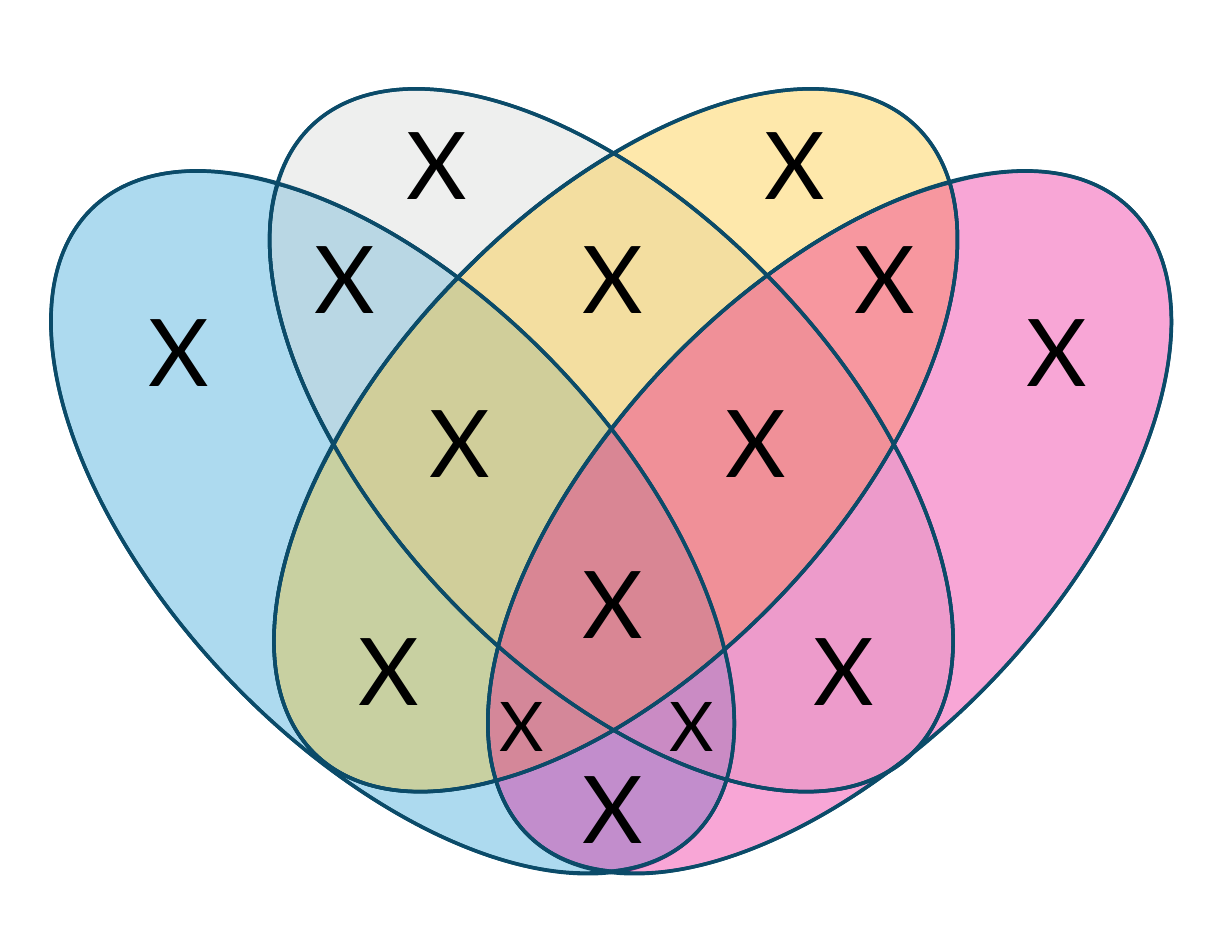
import math

import pptx
import pptx.dml.color
import pptx.enum.shapes
import pptx.enum.text
import pptx.oxml.ns
import pptx.util
from lxml import etree

Cm = pptx.util.Cm
qn = pptx.oxml.ns.qn

COLORS = {
    "blue": "1596D2",
    "grey": "D1D2D1",
    "yellow": "FDBF11",
    "pink": "EC008B",
    "outline": "0B4B69",
    "text": "000000",
}
TILT = 43.6
OVAL_WIDTH, OVAL_HEIGHT = 10.29, 19.71

# Oval: left, top, rotation, colour (lengths in cm)
OVALS = {
    "A": (3.76, 1.99, -TILT, "blue"),
    "B": (8.72, 0.13, -TILT, "grey"),
    "C": (8.82, 0.13, TILT, "yellow"),
    "D": (13.67, 1.99, TILT, "pink"),
}
# Crossings of the ovals, plus the outermost points w (left) and y (right)
POINTS = {
    "a": (13.92, 3.48), "b": (17.40, 6.25), "c": (13.87, 9.73),
    "d": (10.39, 6.30), "e": (21.54, 4.14), "f": (20.27, 10.08),
    "g": (6.30, 4.17), "h": (7.57, 10.08), "i": (16.43, 14.73),
    "j": (13.92, 16.56), "k": (11.30, 14.66), "l": (11.25, 17.70),
    "m": (20.70, 17.07), "n": (20.17, 17.48), "o": (16.48, 17.68),
    "p": (13.87, 19.76), "w": (1.16, 7.30), "y": (26.57, 7.30),
}
# Each region alternates a point with the oval followed to the next point
REGIONS = [
    "aBbDcAdC", "eCfBbD", "gAdChB", "cAiCjBkD", "hBkDlC", "fBmDnBoAiC",
    "jBoApDlC", "gBaCdA", "aCeDbB", "eDyDmBfC", "gBhClDpAwA", "bBfCiAcD",
    "dAcDkBhC", "kBjClD", "iAoBjC", "mBnD", "nDpAoB",
]
LARGE_LABELS = [
    (2.77, 6.53), (7.54, 13.77), (12.62, 16.89), (17.86, 13.77),
    (22.68, 6.53), (16.74, 2.29), (8.62, 2.29), (6.53, 4.86),
    (12.62, 4.86), (18.79, 4.86), (15.85, 8.59), (9.14, 8.59),
    (12.62, 12.24),
]
SMALL_LABELS = [(10.54, 15.37), (14.40, 15.37)]


def turn(x, y, degrees):
    angle = math.radians(degrees)
    return (x * math.cos(angle) - y * math.sin(angle),
            x * math.sin(angle) + y * math.cos(angle))


def arc(oval, start, end):
    """Cubic curves on the shorter arc: two controls and an end for each."""
    left, top, rotation, _ = OVALS[oval]
    center_x, center_y = left + OVAL_WIDTH / 2, top + OVAL_HEIGHT / 2

    def angle_of(point):
        x, y = turn(point[0] - center_x, point[1] - center_y, -rotation)
        return math.atan2(y / OVAL_HEIGHT, x / OVAL_WIDTH)

    def place(angle, pull):
        """Point at an angle, moved along its tangent by pull."""
        x, y = turn(
            OVAL_WIDTH / 2 * (math.cos(angle) - pull * math.sin(angle)),
            OVAL_HEIGHT / 2 * (math.sin(angle) + pull * math.cos(angle)),
            rotation)
        return center_x + x, center_y + y

    first = angle_of(start)
    sweep = (angle_of(end) - first + math.pi) % math.tau - math.pi
    count = math.ceil(abs(sweep) / math.radians(45))
    step = sweep / count
    pull = 4 / 3 * math.tan(step / 4)
    points = []
    for index in range(count):
        angle = first + index * step
        points += [place(angle, pull), place(angle + step, -pull),
                   place(angle + step, 0)]
    return points[:-1] + [end]


class VennSlide:
    font = "Lato"
    line_width = 2.25

    def __init__(self, deck):
        self.shapes = deck.slides.add_slide(deck.slide_layouts[6]).shapes

    def color(self, name):
        return pptx.dml.color.RGBColor.from_string(COLORS[name])

    def outline(self, shape):
        shape.shadow.inherit = False
        shape.line.color.rgb = self.color("outline")
        shape.line.width = pptx.util.Pt(self.line_width)

    def oval(self, left, top, rotation, color, opacity=35):
        shape = self.shapes.add_shape(
            pptx.enum.shapes.MSO_SHAPE.OVAL, Cm(left), Cm(top),
            Cm(OVAL_WIDTH), Cm(OVAL_HEIGHT))
        shape.rotation = rotation
        if rotation > 0:
            shape._element.spPr.find(qn("a:xfrm")).set("flipH", "1")
        shape.fill.solid()
        shape.fill.fore_color.rgb = self.color(color)
        fill_color = next(shape._element.spPr.iter(qn("a:srgbClr")))
        alpha = etree.SubElement(fill_color, qn("a:alpha"))
        alpha.set("val", str(opacity * 1000))
        self.outline(shape)

    def region(self, walk):
        """Outline one region as a freeform tilted like the left ovals."""
        names, ovals = walk[::2], walk[1::2]
        corners = [POINTS[name] for name in names]
        border = [corners[0]]
        for oval, start, end in zip(ovals, corners, corners[1:] + corners[:1]):
            border += arc(oval, start, end)
        level = [tuple(map(Cm, turn(x, y, TILT))) for x, y in border]
        builder = self.shapes.build_freeform(*level[0])
        builder.add_line_segments(level[1:], close=True)
        shape = builder.convert_to_shape()
        self.curve(shape)
        center_x, center_y = turn(shape.left + shape.width / 2,
                                  shape.top + shape.height / 2, -TILT)
        shape.left = round(center_x - shape.width / 2)
        shape.top = round(center_y - shape.height / 2)
        shape.rotation = -TILT
        shape.fill.background()
        self.outline(shape)

    def curve(self, shape):
        """Join each three line segments of a freeform into one cubic curve."""
        segments = list(shape._element.spPr.iter(qn("a:lnTo")))
        for index in range(0, len(segments) - 2, 3):
            cubic = etree.Element(qn("a:cubicBezTo"))
            segments[index].addprevious(cubic)
            for segment in segments[index:index + 3]:
                cubic.append(segment[0])
                segment.getparent().remove(segment)

    def label(self, text, *, left, top, height, size):
        box = self.shapes.add_textbox(Cm(left), Cm(top), Cm(2.57), Cm(height))
        frame = box.text_frame
        frame.word_wrap = True
        frame.auto_size = pptx.enum.text.MSO_AUTO_SIZE.SHAPE_TO_FIT_TEXT
        para = frame.paragraphs[0]
        para.alignment = pptx.enum.text.PP_ALIGN.CENTER
        span = para.add_run()
        span.text = text
        span.font.name = self.font
        span.font.size = pptx.util.Pt(size)
        span.font.color.rgb = self.color("text")


def main():
    deck = pptx.Presentation()
    deck.slide_width, deck.slide_height = Cm(27.94), Cm(21.59)
    page = VennSlide(deck)
    for oval in OVALS.values():
        page.oval(*oval)
    for walk in REGIONS:
        page.region(walk)
    for left, top in LARGE_LABELS:
        page.label("X", left=left, top=top, height=2.82, size=60)
    for left, top in SMALL_LABELS:
        page.label("X", left=left, top=top, height=2.13, size=44)
    deck.save("out.pptx")


if __name__ == "__main__":
    main()
